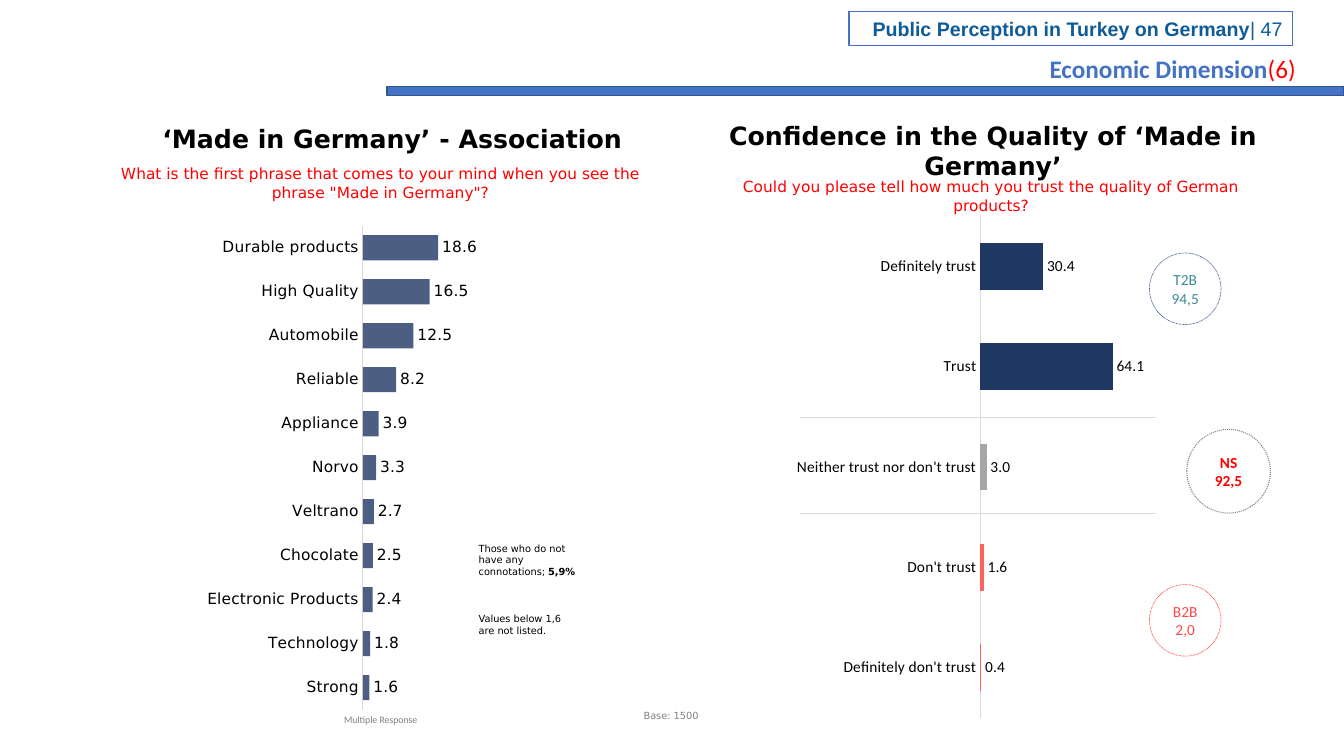
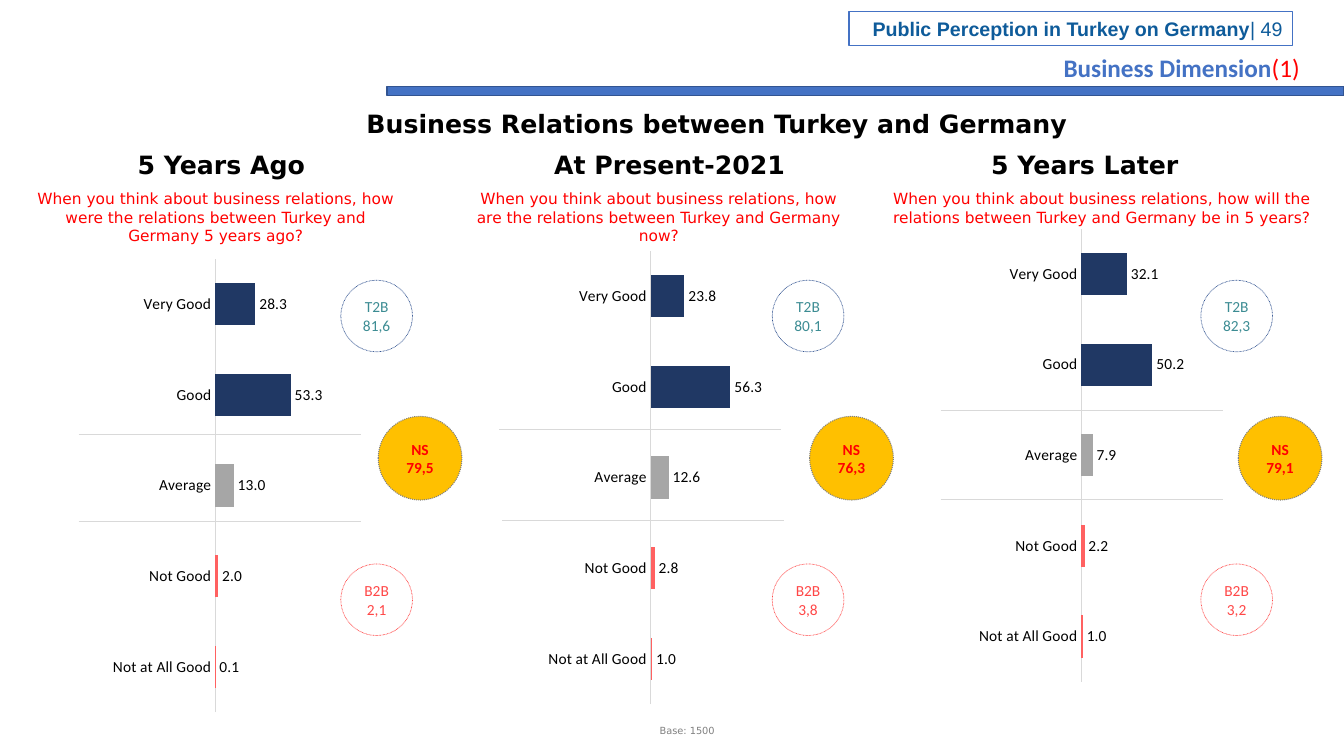
import dataclasses
import pptx
import pptx.chart.data
import pptx.dml.color
import pptx.enum.chart
import pptx.enum.dml
import pptx.enum.shapes
import pptx.enum.text
import pptx.oxml
import pptx.oxml.ns
import pptx.util

WIDTH, HEIGHT = pptx.util.Inches(13.33), pptx.util.Inches(7.5)
ALIGN = pptx.enum.text.PP_ALIGN
ANCHOR = pptx.enum.text.MSO_ANCHOR
FIT = pptx.enum.text.MSO_AUTO_SIZE
SHAPE = pptx.enum.shapes.MSO_SHAPE


@dataclasses.dataclass(frozen=True)
class Theme:
    blue: str = "4472C4"
    edge: str = "325491"
    header: str = "0E5B9A"
    navy: str = "203864"
    grey: str = "A6A6A6"
    muted: str = "808080"
    rule: str = "D9D9D9"
    coral: str = "FF6161"
    bottom: str = "FF4747"
    teal: str = "3C8C93"
    gold: str = "FFC000"
    red: str = "FF0000"
    black: str = "000000"
    sans: str = "DejaVu Sans"
    narrow: str = "Calibri"
    plain: str = "Arial"
    big: int = 18
    medium: int = 14
    normal: int = 11
    small: int = 7


THEME = Theme()


def style(name, size, color, bold=False):
    return {"name": name, "size": pptx.util.Pt(size), "bold": bold, "color": color}


HEADING = style(THEME.sans, THEME.big, THEME.black, True)
QUESTION = style(THEME.sans, THEME.normal, THEME.red)
NOTE = style(THEME.sans, THEME.small, THEME.black)
NOTE_BOLD = {**NOTE, "bold": True}
FOOT = {**NOTE, "color": THEME.muted}
FOOT_NARROW = {**FOOT, "name": THEME.narrow}
TITLE = style(THEME.narrow, THEME.big, THEME.blue, True)
TITLE_NUMBER = {**TITLE, "color": THEME.red, "bold": False}
HEADER = style(THEME.plain, THEME.medium, THEME.header, True)
HEADER_NUMBER = {**HEADER, "bold": False}
SPACED = {"space_before": pptx.util.Pt(6), "space_after": pptx.util.Pt(3)}


@dataclasses.dataclass(frozen=True)
class Box:
    """Columns and rows, each a hundredth of the slide."""
    left: float
    top: float
    width: float = 0
    height: float = 0

    def place(self, inner):
        return Box(self.left + inner.left, self.top + inner.top, inner.width, inner.height)

    def emu(self):
        return (int(self.left * WIDTH / 100), int(self.top * HEIGHT / 100),
                int(self.width * WIDTH / 100), int(self.height * HEIGHT / 100))


@dataclasses.dataclass(frozen=True)
class Panel:
    region: Box
    heading: str
    heading_box: Box
    question: str
    question_box: Box
    chart_box: Box
    plot: tuple
    categories: tuple
    values: tuple
    rules: tuple = ()
    rule_length: float = 21
    badge_rows: tuple = (18.07, 36.07, 55.6)
    badge_values: tuple = ()
    net_fill: str = ""


def rgb(color):
    return pptx.dml.color.RGBColor.from_string(color)


def assign(target, values):
    for name, value in values.items():
        setattr(target, name, value)


def style_font(font, look):
    assign(font, {key: value for key, value in look.items() if key != "color"})
    font.color.rgb = rgb(look["color"])


def write(frame, paragraphs, align, spacing=None, **frame_format):
    assign(frame, {"word_wrap": True, "auto_size": FIT.SHAPE_TO_FIT_TEXT,
                   "vertical_anchor": ANCHOR.TOP, **frame_format})
    for index, spans in enumerate(paragraphs):
        para = frame.add_paragraph() if index else frame.paragraphs[0]
        assign(para, {"alignment": align, **(spacing or {})})
        for text, look in spans:
            span = para.add_run()
            span.text = text
            style_font(span.font, look)


def add_text(page, box, spans, align=ALIGN.CENTER, spacing=None):
    write(page.shapes.add_textbox(*box.emu()).text_frame, [spans], align, spacing)


def set_line(line, color, width, dash=None):
    line.color.rgb = rgb(color)
    assign(line, {"width": pptx.util.Pt(width), "dash_style": dash})


def add_shape(page, kind, box, fill, line):
    shape = page.shapes.add_shape(kind, *box.emu())
    shape.shadow.inherit = False
    if fill:
        shape.fill.solid()
        shape.fill.fore_color.rgb = rgb(fill)
    else:
        shape.fill.background()
    set_line(shape.line, *line)
    return shape


def add_rule(page, start, length):
    left, top, width, _ = Box(start.left, start.top, length).emu()
    rule = page.shapes.add_connector(
        pptx.enum.shapes.MSO_CONNECTOR.STRAIGHT, left, top, left + width, top)
    set_line(rule.line, THEME.rule, 0.75)
    rule.element.spPr.append(pptx.oxml.parse_xml(
        "<a:effectLst %s/>" % pptx.oxml.ns.nsdecls("a")))


def add_badges(page, panel):
    dot = pptx.enum.dml.MSO_LINE.ROUND_DOT
    badges = (
        ("T2B", 21, 5.33, 9.47, THEME.teal, False, "", (THEME.edge, 0.5, dot)),
        ("NS", 23.78, 6.23, 11.07, THEME.red, True, panel.net_fill, (THEME.muted, 0.75, dot)),
        ("B2B", 21, 5.33, 9.47, THEME.bottom, False, "", (THEME.bottom, 0.5, dot)),
    )
    margins = {"margin_" + side: 0 for side in ("left", "right", "top", "bottom")}
    for badge, row, value in zip(badges, panel.badge_rows, panel.badge_values):
        label, column, width, height, color, bold, fill, line = badge
        box = panel.region.place(Box(column, row, width, height))
        circle = add_shape(page, SHAPE.OVAL, box, fill, line)
        look = style(THEME.narrow, THEME.normal, color, bold)
        write(circle.text_frame, [[(label, look)], [(value, look)]], ALIGN.CENTER,
              word_wrap=False, auto_size=FIT.NONE, vertical_anchor=ANCHOR.MIDDLE, **margins)


def set_plot_layout(chart, shares):
    area = chart.element.find(".//" + pptx.oxml.ns.qn("c:plotArea"))
    for old in area.findall(pptx.oxml.ns.qn("c:layout")):
        area.remove(old)
    settings = [("layoutTarget", "inner"), ("xMode", "edge"), ("yMode", "edge")]
    settings += zip("xywh", shares)
    inner = "".join('<c:%s val="%s"/>' % setting for setting in settings)
    area.insert(0, pptx.oxml.parse_xml(
        "<c:layout %s><c:manualLayout>%s</c:manualLayout></c:layout>"
        % (pptx.oxml.ns.nsdecls("c"), inner)))


def add_bars(page, panel, font, maximum, gap, colors, reverse=False, opacity=100):
    data = pptx.chart.data.CategoryChartData(number_format="0.0")
    data.categories = panel.categories
    data.add_series("Series 1", panel.values)
    chart = page.shapes.add_chart(
        pptx.enum.chart.XL_CHART_TYPE.BAR_CLUSTERED,
        *panel.region.place(panel.chart_box).emu(), data).chart
    assign(chart, {"has_legend": False, "has_title": False})
    look = style(font, THEME.normal, THEME.black)
    style_font(chart.font, {**look, "color": THEME.muted})
    none = pptx.enum.chart.XL_TICK_MARK.NONE
    assign(chart.category_axis, {"has_major_gridlines": False, "major_tick_mark": none,
                                 "minor_tick_mark": none, "reverse_order": reverse})
    style_font(chart.category_axis.tick_labels.font, look)
    set_line(chart.category_axis.format.line, THEME.rule, 0.75)
    assign(chart.value_axis, {"has_major_gridlines": False, "visible": False,
                              "minimum_scale": 0, "maximum_scale": maximum})
    plot = chart.plots[0]
    assign(plot, {"gap_width": gap, "vary_by_categories": False, "has_data_labels": True})
    assign(plot.data_labels, {
        "show_value": True, "number_format": "0.0", "number_format_is_linked": False,
        "position": pptx.enum.chart.XL_LABEL_POSITION.OUTSIDE_END})
    style_font(plot.data_labels.font, look)
    series = plot.series[0]
    fills = [series.format.fill]
    if len(colors) > 1:
        fills = [series.points[index].format.fill for index in range(len(colors))]
    for fill, color in zip(fills, colors):
        fill.solid()
        fill.fore_color.rgb = rgb(color)
    if opacity < 100:
        tint = chart.element.find(".//%s/%s/%s/%s" % tuple(
            pptx.oxml.ns.qn(tag) for tag in ("c:ser", "c:spPr", "a:solidFill", "a:srgbClr")))
        tint.append(pptx.oxml.parse_xml('<a:alpha %s val="%d"/>' % (
            pptx.oxml.ns.nsdecls("a"), opacity * 1000)))
    set_plot_layout(chart, panel.plot)


def add_captions(page, panel, spacing=None):
    place = panel.region.place
    add_text(page, place(panel.heading_box), [(panel.heading, HEADING)])
    add_text(page, place(panel.question_box), [(panel.question, QUESTION)], spacing=spacing)


def association_panel(page, panel):
    add_bars(page, panel, THEME.sans, 70, 75, [THEME.navy], reverse=True, opacity=80)
    add_captions(page, panel)
    notes = (
        (Box(22.06, 78.13, 8.03, 2.93), [("Multiple Response", FOOT_NARROW)], ALIGN.CENTER),
        (Box(32.63, 64.8, 8.55, 4.53), [("Values below 1,6 are not listed.", NOTE)], ALIGN.LEFT),
        (Box(32.63, 55.47, 9.83, 6),
         [("Those who do not have any connotations; ", NOTE), ("5,9%", NOTE_BOLD)], ALIGN.LEFT),
    )
    for box, spans, align in notes:
        add_text(page, panel.region.place(box), spans, align)


def rating_panel(page, panel):
    add_bars(page, panel, THEME.narrow, 120, 115,
             [THEME.coral, THEME.coral, THEME.grey, THEME.navy, THEME.navy])
    for column, row in panel.rules:
        add_rule(page, panel.region.place(Box(column, row)), panel.rule_length)
    add_captions(page, panel, SPACED)
    add_badges(page, panel)


def start_page(deck, title, number, title_box, page_number, base_box):
    page = deck.slides.add_slide(deck.slide_layouts[5])
    add_shape(page, SHAPE.RECTANGLE, Box(28.81, 11.47, 71.19, 1.2), THEME.blue, (THEME.edge, 1))
    header = add_shape(page, SHAPE.RECTANGLE, Box(63.17, 1.47, 33, 4.53), "", (THEME.blue, 0.75))
    write(header.text_frame, [[("Public Perception in Turkey on Germany", HEADER),
                               ("| %d" % page_number, HEADER_NUMBER)]],
          ALIGN.RIGHT, vertical_anchor=ANCHOR.MIDDLE)
    assign(page.shapes.title, dict(zip(("left", "top", "width", "height"), title_box.emu())))
    write(page.shapes.title.text_frame, [[(title, TITLE), (number, TITLE_NUMBER)]], ALIGN.LEFT)
    add_text(page, base_box, [("Base: 1500", FOOT)])
    return page


ASSOCIATION = Panel(
    Box(2.25, 15.6), "‘Made in Germany’ - Association", Box(4.13, 0, 45.61, 5.33),
    'What is the first phrase that comes to your mind when you see the phrase "Made in Germany"?',
    Box(5.7, 5.47, 40.74, 6.27), Box(0, 13.6, 45.84, 66), (0.54, 0.01, 0.46, 0.97),
    ("Durable products", "High Quality", "Automobile", "Reliable", "Appliance", "Norvo",
     "Veltrano", "Chocolate", "Electronic Products", "Technology", "Strong"),
    (18.6, 16.5, 12.5, 8.2, 3.9, 3.3, 2.7, 2.5, 2.4, 1.8, 1.6))

CONFIDENCE = Panel(
    Box(64.52, 15.2), "Confidence in the Quality of ‘Made in Germany’",
    Box(-13.36, 0, 45.46, 9.47),
    "Could you please tell how much you trust the quality of German products?",
    Box(-12.08, 7.6, 42.61, 6.27), Box(-8.93, 12.27, 35.78, 69.73), (0.485, 0.016, 0.515, 0.952),
    ("Definitely don't trust", "Don't trust", "Neither trust nor don't trust", "Trust",
     "Definitely trust"),
    (0.4, 1.6, 3, 64.1, 30.4), ((-5.03, 40), (-5.03, 52.67)), 26.56,
    (18.27, 41.6, 62.13), ("94,5", "92,5", "2,0"))


def relations(left, heading, heading_left, question, question_box, chart_left, chart_top,
              values, rules, badge_values):
    return Panel(
        Box(left, 19), heading, Box(heading_left, 0.1, 22.13, 5.33),
        "When you think about business relations, how " + question, question_box,
        Box(chart_left, chart_top, 24.53, 64.13), (0.485, 0.033, 0.515, 0.935),
        ("Not at All Good", "Not Good", "Average", "Good", "Very Good"),
        values, rules, badge_values=badge_values, net_fill=THEME.gold)


RELATIONS = (
    relations(4.36, "5 Years Ago", 1.04,
              "were the relations between Turkey and Germany 5 years ago?",
              Box(-2.71, 5.4, 28.81, 8.8), -0.23, 13.13, (0.1, 2, 13, 53.3, 28.3),
              ((1.49, 38.47), (1.49, 49.93)), ("81,6", "79,5", "2,1")),
    relations(36.46, "At Present-2021", 2.3,
              "are the relations between Turkey and Germany now?",
              Box(-2.25, 5.4, 29.63, 8.8), 0.07, 12.07, (1, 2.8, 12.6, 56.3, 23.8),
              ((0.67, 37.8), (0.9, 49.8)), ("80,1", "76,3", "3,8")),
    relations(68.35, "5 Years Later", 1.3,
              "will the relations between Turkey and Germany be in 5 years?",
              Box(-3.16, 5.4, 33.61, 6.27), 0.22, 9.13, (1, 2.2, 7.9, 50.2, 32.1),
              ((1.64, 35.27), (1.64, 47.13)), ("82,3", "79,1", "3,2")),
)


def economic_page(deck):
    page = start_page(deck, "Economic Dimension", "(6)", Box(77.34, 6.4, 21.08, 5.33), 47,
                      Box(46.89, 93.2, 6.08, 2.93))
    association_panel(page, ASSOCIATION)
    rating_panel(page, CONFIDENCE)


def business_page(deck):
    page = start_page(deck, "Business Dimension", "(1)", Box(78.39, 6.27, 19.5, 5.33), 49,
                      Box(48.09, 95.2, 6.08, 2.93))
    add_text(page, Box(18.15, 13.73, 70.37, 5.33),
             [("Business Relations between Turkey and Germany", HEADING)])
    for panel in RELATIONS:
        rating_panel(page, panel)


def main():
    deck = pptx.Presentation()
    assign(deck, {"slide_width": WIDTH, "slide_height": HEIGHT})
    economic_page(deck)
    business_page(deck)
    deck.save("out.pptx")


if __name__ == "__main__":
    main()
